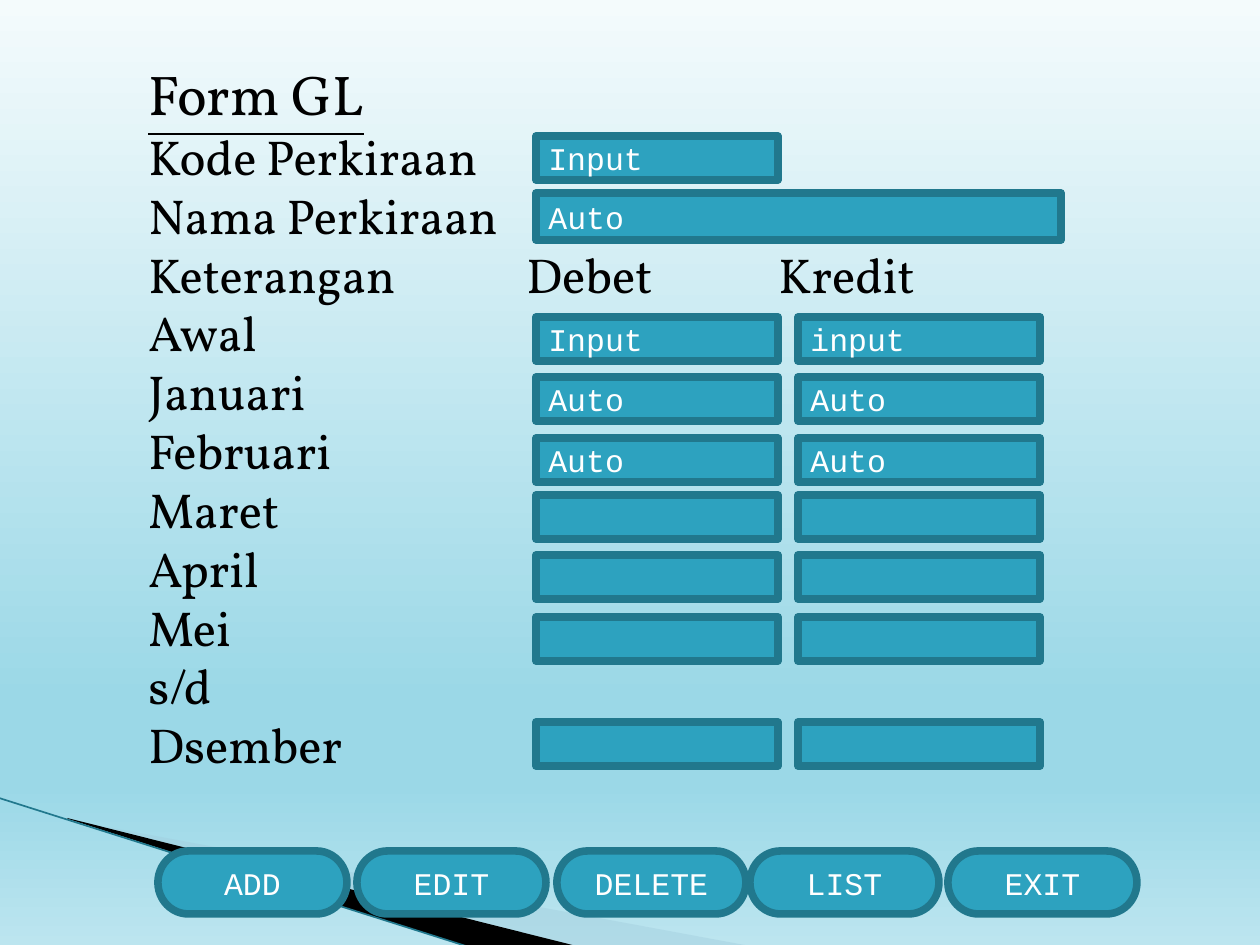
from lxml.etree import SubElement
from pptx import Presentation
from pptx.dml.color import RGBColor
from pptx.enum.shapes import MSO_CONNECTOR, MSO_SHAPE
from pptx.enum.text import MSO_ANCHOR, PP_ALIGN
from pptx.oxml.ns import qn
from pptx.util import Pt

SCALE = 914400 / 126
COLORS = {"ink": "000000", "light": "FFFFFF", "field": "2DA2BF", "edge": "21788D", "mist": "A0CBDC"}
SKY = [(0, "F4FBFC"), (74, "9BD8E7"), (83, "9BD8E7"), (100, "BCE5EF")]
LABELS = ["Kode Perkiraan", "Nama Perkiraan", "Keterangan\t\tDebet\tKredit", "Awal", "Januari", "Februari",
          "Maret", "April", "Mei", "s/d", "Dsember"]
MONTH_ROWS = [(317, "Input", "input"), (377, "Auto", "Auto"), (438, "Auto", "Auto"), (495, "", ""),
              (555, "", ""), (617, "", ""), (722, "", "")]
BUTTONS = [(158, "ADD"), (357, "EDIT"), (557, "DELETE"), (750, "LIST"), (948, "EXIT")]


def px(length):
    return round(length * SCALE)


def rgb(name):
    return RGBColor.from_string(COLORS[name])


def write(paragraph, text, font="Courier New", size=18, color="light", underline=False, align=PP_ALIGN.LEFT, tabs=()):
    if tabs:
        tab_list = SubElement(paragraph._p.get_or_add_pPr(), qn("a:tabLst"))
        for stop in tabs:
            SubElement(tab_list, qn("a:tab"), pos=str(px(stop)), algn="l")
    paragraph.alignment = align
    run = paragraph.add_run()
    run.text = text
    run.font.name = font
    run.font.size = Pt(size)
    run.font.underline = underline
    run.font.color.rgb = rgb(color)


def draw_sky(slide):
    fill = slide.background.fill
    fill.gradient()
    fill.gradient_angle = 270
    stops = next(slide.element.iter(qn("a:gsLst")))
    for stop in list(stops):
        stops.remove(stop)
    for percent, color in SKY:
        stop = SubElement(stops, qn("a:gs"), pos=str(percent * 1000))
        SubElement(stop, qn("a:srgbClr"), val=color)


def draw_wedge(slide, points, color, alpha=100):
    builder = slide.shapes.build_freeform(*points[0], scale=SCALE)
    builder.add_line_segments(points[1:], close=True)
    wedge = builder.convert_to_shape()
    wedge.shadow.inherit = False
    wedge.fill.solid()
    wedge.fill.fore_color.rgb = rgb(color)
    wedge.line.fill.background()
    if alpha < 100:
        tint = next(wedge._element.spPr.iter(qn("a:srgbClr")))
        SubElement(tint, qn("a:alpha"), val=str(alpha * 1000))


def draw_corner(slide, left, top):
    def place(points):
        return [(left + x, top + y) for x, y in points]

    draw_wedge(slide, place([(69, 22), (750, 148), (575, 148), (69, 21)]), "mist", 40)
    draw_wedge(slide, place([(67, 20), (576, 148), (469, 149), (68, 21)]), "ink")
    stroke = slide.shapes.add_connector(MSO_CONNECTOR.STRAIGHT, px(left - 1), px(top), px(left + 469), px(top + 149))
    stroke.line.color.rgb = rgb("edge")
    stroke.line.width = Pt(0.95)
    SubElement(stroke._element.spPr, qn("a:effectLst"))


def draw_labels(slide, left, top, width, height):
    frame = slide.shapes.add_textbox(px(left), px(top), px(width), px(height)).text_frame
    frame.word_wrap = True
    write(frame.paragraphs[0], "Form GL", font="Vollkorn", size=32, color="ink", underline=True)
    for label in LABELS:
        tabs = (252, 378, 630) if "\t" in label else ()
        write(frame.add_paragraph(), label, font="Vollkorn", size=28, color="ink", tabs=tabs)


def draw_control(slide, left, top, width, height, text, kind=MSO_SHAPE.RECTANGLE, align=PP_ALIGN.LEFT):
    control = slide.shapes.add_shape(kind, px(left), px(top), px(width), px(height))
    control.shadow.inherit = False
    control.fill.solid()
    control.fill.fore_color.rgb = rgb("field")
    control.line.color.rgb = rgb("edge")
    control.line.width = Pt(4.33)
    if text:
        control.text_frame.word_wrap = True
        control.text_frame.vertical_anchor = MSO_ANCHOR.MIDDLE
        write(control.text_frame.paragraphs[0], text, align=align)


def draw_fields(slide, left, top):
    draw_control(slide, left, top, 242, 44, "Input")
    draw_control(slide, left, top + 57, 525, 47, "Auto")
    for row_top, debet, kredit in MONTH_ROWS:
        for column, text in enumerate((debet, kredit)):
            draw_control(slide, left + 262 * column, row_top, 242, 44, text)


def draw_buttons(slide, top, width, height):
    for left, text in BUTTONS:
        draw_control(slide, left, top, width, height, text, MSO_SHAPE.FLOWCHART_TERMINATOR, PP_ALIGN.CENTER)


def main():
    deck = Presentation()
    deck.slide_width, deck.slide_height = px(1260), px(945)
    slide = deck.slides.add_slide(deck.slide_layouts[6])
    draw_sky(slide)
    draw_corner(slide, 0, 798)
    draw_labels(slide, 136, 53, 977, 733)
    draw_fields(slide, 536, 136)
    draw_buttons(slide, 851, 189, 63)
    deck.save("out.pptx")


if __name__ == "__main__":
    main()
